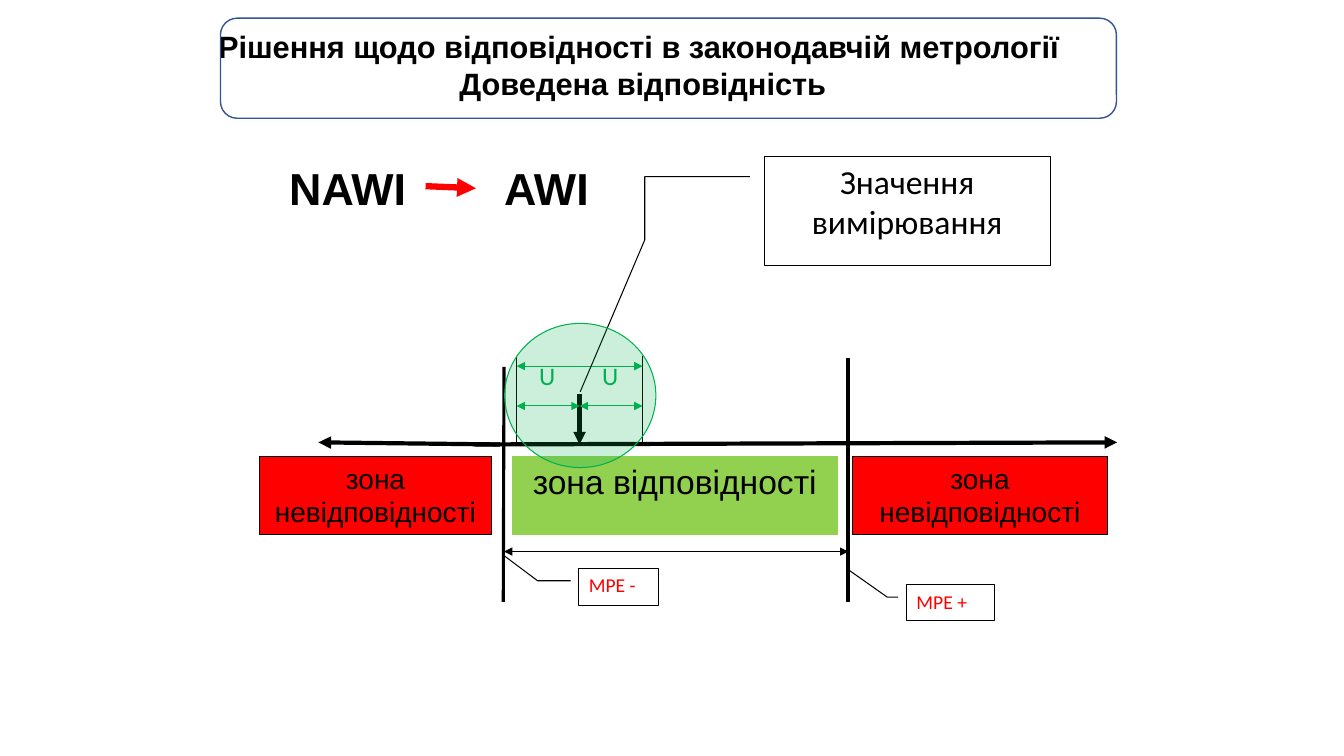
"""Build a slide on conformity decisions in legal metrology."""
from lxml import etree
from pptx import Presentation
from pptx.dml.color import RGBColor
from pptx.enum.shapes import MSO_CONNECTOR, MSO_SHAPE
from pptx.enum.text import MSO_ANCHOR, PP_ALIGN
from pptx.oxml.ns import qn
from pptx.util import Pt

RECT = MSO_SHAPE.RECTANGLE
ROUND = MSO_SHAPE.ROUNDED_RECTANGLE
NODE = MSO_SHAPE.FLOWCHART_CONNECTOR
CALL2 = MSO_SHAPE.LINE_CALLOUT_2
CALL3 = MSO_SHAPE.LINE_CALLOUT_3
STRAIGHT = MSO_CONNECTOR.STRAIGHT
LEFT, CENTER = PP_ALIGN.LEFT, PP_ALIGN.CENTER
TOP = MSO_ANCHOR.TOP

BLACK = RGBColor(0x00, 0x00, 0x00)
WHITE = RGBColor(0xFF, 0xFF, 0xFF)
RED = RGBColor(0xFF, 0x00, 0x00)
GREEN = RGBColor(0x00, 0xB0, 0x50)
LIME = RGBColor(0x92, 0xD0, 0x50)
BLUE = RGBColor(0x32, 0x54, 0x91)

AXIS = 317.5
VALUE = 414
SPREAD = 45


def add_line(slide, start, end, color=BLACK, width=0.75, ends=()):
    """Draw a straight line; ends names the arrowheads, head before tail."""
    line = slide.shapes.add_connector(STRAIGHT, *map(Pt, start + end))
    line.line.color.rgb = color
    line.line.width = Pt(width)
    props = line.element.spPr
    for end_name in ends:
        etree.SubElement(props.find(qn("a:ln")), qn(f"a:{end_name}"), type="triangle")
    etree.SubElement(props, qn("a:effectLst"))


def add_box(slide, kind, box, fill=None, line=None, width=0.75, adjust=()):
    """Draw a preset shape with an optional fill and outline."""
    shape = slide.shapes.add_shape(kind, *map(Pt, box))
    shape.shadow.inherit = False
    if fill is None:
        shape.fill.background()
    else:
        shape.fill.solid()
        shape.fill.fore_color.rgb = fill
    if line is None:
        shape.line.fill.background()
    else:
        shape.line.color.rgb = line
        shape.line.width = Pt(width)
    for index, value in enumerate(adjust):
        shape.adjustments[index] = value
    return shape


def set_text(shape, lines, size, font="Arial", color=BLACK, bold=False, align=CENTER):
    """Write one paragraph per line into a shape."""
    frame = shape.text_frame
    frame.word_wrap = True
    frame.vertical_anchor = TOP
    for index, line in enumerate(lines):
        para = frame.add_paragraph() if index else frame.paragraphs[0]
        para.alignment = align
        run = para.add_run()
        run.text = line
        run.font.name = font
        run.font.size = Pt(size)
        run.font.bold = bold
        run.font.color.rgb = color


def add_label(slide, box, lines, size, align):
    """Add a bold text box."""
    label = slide.shapes.add_textbox(*map(Pt, box))
    set_text(label, lines, size, bold=True, align=align)


def add_scale(slide):
    """Draw the right half of the axis, the value arrow and the limits."""
    add_line(slide, (339, AXIS), (798, 316), width=3, ends=["tailEnd"])
    add_line(slide, (VALUE, 281.5), (VALUE, AXIS), width=3, ends=["tailEnd"])
    add_line(slide, (360, 262), (359.5, 430), width=2.25)
    add_line(slide, (605.5, 255.5), (605.5, 430), width=3)
    add_line(slide, (360, 394), (606, 394), ends=["headEnd", "tailEnd"])


def add_limits(slide):
    """Add the callouts that name the limits."""
    limits = [
        ("MPE +", (647.5, 417.5, 63, 25.5), (0.356, -0.095, 0.356, -0.218, -0.406, -0.655)),
        ("MPE -", (413.5, 406, 57, 26.5), (0.333, -0.105, 0.333, -0.518, -0.338, -0.934)),
    ]
    for text, box, adjust in limits:
        shape = add_box(slide, CALL2, box, line=BLACK, adjust=adjust)
        set_text(shape, [text], 14, "Calibri", RED, align=LEFT)


def add_spread(slide):
    """Draw the uncertainty on both sides of the value."""
    low, high = VALUE - SPREAD, VALUE + SPREAD
    both = ["headEnd", "tailEnd"]
    for left in (low, VALUE):
        add_line(slide, (left, 290), (left + SPREAD, 290), GREEN, ends=both)
        shape = add_box(slide, RECT, (left + 9, 254, 27.5, 26.5), WHITE)
        set_text(shape, ["U"], 18, "Calibri", GREEN, align=LEFT)
    for edge in (low, high):
        add_line(slide, (edge, 254), (edge, AXIS))
    add_line(slide, (low, 261.5), (high, 261.5), GREEN, ends=both)


def add_zones(slide):
    """Add the zones below the axis."""
    zones = [
        (366, 232, LIME, LIME, "зона відповідності", 24),
        (609, 182, RED, BLACK, "зона невідповідності", 20),
        (185.5, 165.5, RED, BLACK, "зона невідповідності", 20),
    ]
    for left, width, fill, line, text, size in zones:
        shape = add_box(slide, RECT, (left, 326, width, 55.5), fill, line)
        set_text(shape, [text], size)


def add_value(slide):
    """Add the callout of the value and the clear circle around it."""
    adjust = (0.188, -0.051, 0.188, -0.419, 0.768, -0.419, 2.159, -0.645)
    shape = add_box(slide, CALL3, (546, 111.5, 204, 78), line=BLACK, adjust=adjust)
    set_text(shape, ["Значення вимірювання"], 24, "Calibri")
    circle = add_box(slide, NODE, (360.5, 231, 108, 103), GREEN, GREEN)
    color = circle.element.spPr.find(f"{qn('a:solidFill')}/{qn('a:srgbClr')}")
    etree.SubElement(color, qn("a:alpha"), val="20000")


def add_title(slide):
    """Add the framed title and the change of instrument."""
    title = ["Рішення щодо відповідності в законодавчій метрології ", "Доведена відповідність"]
    add_label(slide, (147.5, 16.5, 623.5, 60.5), title, 22, CENTER)
    add_box(slide, ROUND, (157.5, 13, 640, 71.5), line=BLUE, width=1)
    for left, text in ((199.5, "NAWI"), (353, "AWI")):
        add_label(slide, (left, 111.5, 104, 46), [text], 32, LEFT)
    add_line(slide, (304, 133), (340, 134.5), RED, 4.5, ["tailEnd"])


def main():
    """Build and save the slide."""
    deck = Presentation()
    deck.slide_width, deck.slide_height = Pt(960), Pt(540)
    slide = deck.slides.add_slide(deck.slide_layouts[6])
    add_scale(slide)
    add_limits(slide)
    add_spread(slide)
    add_zones(slide)
    add_line(slide, (357, AXIS), (227.5, 316), width=3, ends=["tailEnd"])
    add_value(slide)
    add_title(slide)
    deck.save("out.pptx")


if __name__ == "__main__":
    main()
